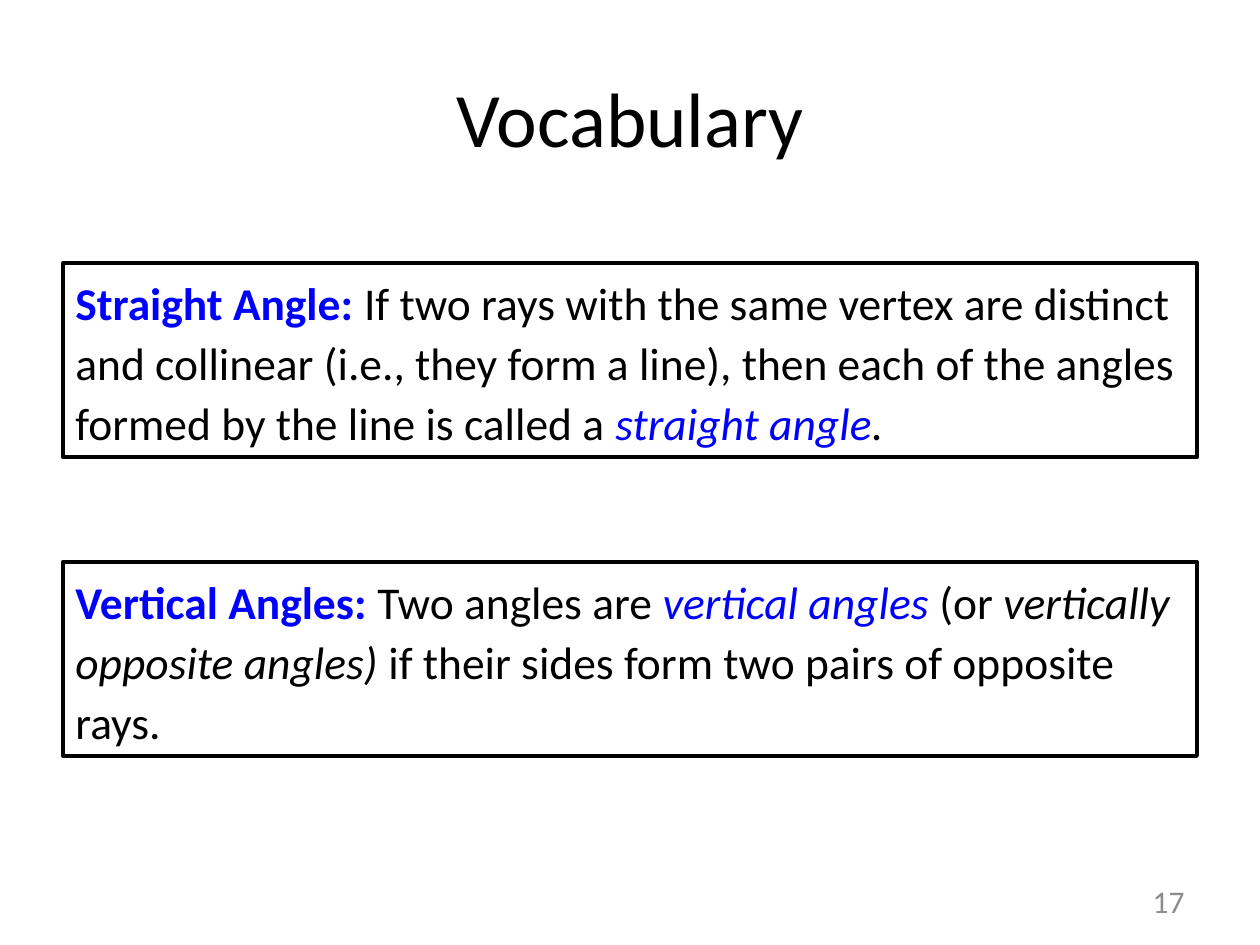
"""Build the vocabulary slide with two boxed angle definitions."""
from pptx import Presentation
from pptx.dml.color import RGBColor
from pptx.enum.text import MSO_ANCHOR, MSO_AUTO_SIZE, PP_ALIGN
from pptx.util import Inches, Pt

MIDDLE = MSO_ANCHOR.MIDDLE
GROW = MSO_AUTO_SIZE.SHAPE_TO_FIT_TEXT
LEFT, CENTER, RIGHT = PP_ALIGN.LEFT, PP_ALIGN.CENTER, PP_ALIGN.RIGHT

FONT = "Calibri"
BLACK, BLUE, GRAY = "000000", "0000FF", "8C8C8C"
TITLE = "Vocabulary"
PAGE_NUMBER = "17"
STYLES = {
    "term": (BLUE, True, False),
    "plain": (BLACK, False, False),
    "key": (BLUE, False, True),
    "italic": (BLACK, False, True),
}
DEFINITIONS = [
    [
        ("Straight Angle: ", "term"),
        ("If two rays with the same vertex are distinct and collinear "
         "(i.e., they form a line), then each of the angles formed by "
         "the line is called a ", "plain"),
        ("straight angle", "key"),
        (".", "italic"),
    ],
    [
        ("Vertical Angles: ", "term"),
        ("Two angles are ", "plain"),
        ("vertical angles ", "key"),
        ("(or ", "plain"),
        ("vertically opposite angles) ", "italic"),
        ("if their sides form two pairs of opposite rays.", "plain"),
    ],
]
WIDTH, HEIGHT = 10, 7.5
MARGIN = WIDTH * 0.05
CONTENT_WIDTH = WIDTH - 2 * MARGIN
BOX_TOP, BOX_HEIGHT, BOX_STEP = 2.09, 1.54, 2.37
NUMBER_WIDTH = 1.2


def color(value):
    return RGBColor.from_string(value)


def add_span(para, text, size, fill, bold=False, italic=False):
    span = para.add_run()
    span.text = text
    font = span.font
    font.name, font.size = FONT, Pt(size)
    font.bold, font.italic = bold, italic
    font.color.rgb = color(fill)


def add_box(page, left, top, width, height, align):
    box = page.shapes.add_textbox(*map(Inches, (left, top, width, height)))
    box.text_frame.word_wrap = True
    para = box.text_frame.paragraphs[0]
    para.alignment = align
    return box, para


def add_title(page):
    title = page.shapes.title
    title.left, title.top = Inches(MARGIN), Inches(0.3)
    title.width, title.height = Inches(CONTENT_WIDTH), Inches(1.25)
    title.text_frame.vertical_anchor = MIDDLE
    para = title.text_frame.paragraphs[0]
    para.alignment = CENTER
    add_span(para, TITLE, 44, BLACK)


def add_definition(page, row, spans):
    top = BOX_TOP + row * BOX_STEP
    box, para = add_box(page, MARGIN, top, CONTENT_WIDTH, BOX_HEIGHT, LEFT)
    box.text_frame.auto_size = GROW
    box.line.color.rgb = color(BLACK)
    box.line.width = Pt(2.25)
    para.line_spacing = 1.1
    for text, style in spans:
        add_span(para, text, 26, *STYLES[style])


def add_page_number(page):
    left = WIDTH - MARGIN - NUMBER_WIDTH
    box, para = add_box(page, left, 6.95, NUMBER_WIDTH, 0.4, RIGHT)
    box.text_frame.vertical_anchor = MIDDLE
    add_span(para, PAGE_NUMBER, 18, GRAY)


def main():
    deck = Presentation()
    deck.slide_width, deck.slide_height = Inches(WIDTH), Inches(HEIGHT)
    page = deck.slides.add_slide(deck.slide_layouts[5])
    add_title(page)
    for row, spans in enumerate(DEFINITIONS):
        add_definition(page, row, spans)
    add_page_number(page)
    deck.save("out.pptx")


if __name__ == "__main__":
    main()
